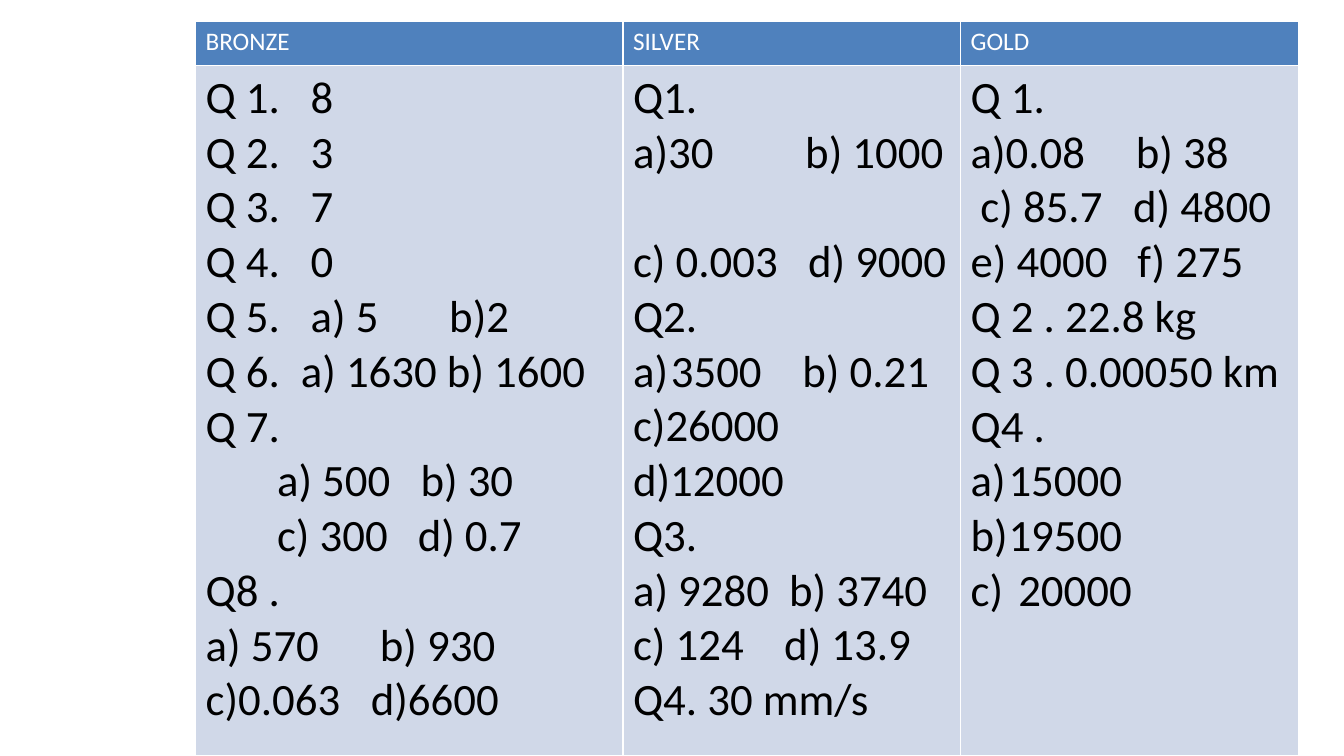
import pptx
import pptx.util
import pptx.dml.color
from lxml import etree

Pt = pptx.util.Pt
INK = {"head": "4F81BD", "body": "D0D8E8", "light": "FFFFFF", "dark": "000000"}
FONT = "Calibri"
NS = "http://schemas.openxmlformats.org/drawingml/2006/main"

# Each line is its text, then options: tab stops, list indent, space before
BRONZE = [
    ("Q 1.\t8", {"tabs": [75]}),
    ("Q 2.\t3", {"tabs": [75]}),
    ("Q 3.\t7", {"tabs": [75]}),
    ("Q 4.\t0", {"tabs": [75]}),
    ("Q 5.\ta) 5\tb)2", {"tabs": [75, 174]}),
    ("Q 6.\ta) 1630 b) 1600", {"tabs": [68]}),
    ("Q 7.", {}),
    ("\ta) 500\tb) 30", {"tabs": [51, 153.5]}),
    ("\tc) 300\td) 0.7", {"tabs": [51, 151.5]}),
    ("Q8 .", {}),
    ("a) 570\tb) 930", {"tabs": [124.5]}),
    ("c)0.063\td)6600", {"tabs": [118]}),
]
SILVER = [
    ("Q1.", {}),
    ("a)30\tb) 1000", {"tabs": [123]}),
    ("c) 0.003\td) 9000", {"tabs": [125], "before": 39}),
    ("Q2.", {}),
    ("3500\tb) 0.21", {"tabs": [121], "hang": 27}),
    ("c)26000", {}),
    ("d)12000", {}),
    ("Q3.", {}),
    ("a) 9280\tb) 3740", {"tabs": [111.5]}),
    ("c) 124\td) 13.9", {"tabs": [108]}),
    ("Q4. 30 mm/s", {}),
]
GOLD = [
    ("Q 1.", {}),
    ("a)0.08\tb) 38", {"tabs": [118]}),
    ("\tc) 85.7\td) 4800", {"tabs": [7, 116]}),
    ("e) 4000\tf) 275", {"tabs": [119]}),
    ("Q 2 . 22.8 kg", {}),
    ("Q 3 . 0.00050 km", {}),
    ("Q4 .", {}),
    ("15000", {"hang": 27}),
    ("19500", {"hang": 27}),
    ("20000", {"hang": 34}),
]
LEVELS = [("BRONZE", 305.3, BRONZE), ("SILVER", 241.2, SILVER), ("GOLD", 241.2, GOLD)]


def tint(name):
    return pptx.dml.color.RGBColor.from_string(INK[name])


def write(para, text, size=32, ink="dark", tabs=(), hang=0, before=0):
    """Fill one paragraph, with tab stops or a lettered hanging indent."""
    run = para.add_run()
    run.text = text
    run.font.name, run.font.size, run.font.bold = FONT, Pt(size), False
    run.font.color.rgb = tint(ink)
    para.space_before = Pt(before)
    props = para._p.get_or_add_pPr()
    if hang:
        props.set("marL", str(Pt(hang)))
        props.set("indent", str(-Pt(hang)))
        etree.SubElement(props, f"{{{NS}}}buAutoNum", type="alphaLcParenR")
    if tabs:
        stops = etree.SubElement(props, f"{{{NS}}}tabLst")
        for stop in tabs:
            etree.SubElement(stops, f"{{{NS}}}tab", pos=str(Pt(stop)), algn="l")


def fill(cell, ink, lines):
    """Colour a cell and write its lines, one paragraph each."""
    cell.fill.solid()
    cell.fill.fore_color.rgb = tint(ink)
    frame = cell.text_frame
    for row, (text, form) in enumerate(lines):
        para = frame.add_paragraph() if row else frame.paragraphs[0]
        write(para, text, **form)


def answers(slide, left, top, width, height, head=32):
    """Table of answers: a header row over one tall cell per level."""
    table = slide.shapes.add_table(
        2, len(LEVELS), Pt(left), Pt(top), Pt(width), Pt(height)).table
    table.rows[0].height = Pt(head)
    table.rows[1].height = Pt(height - head)
    total = sum(share for _, share, _ in LEVELS)
    for col, (name, share, lines) in enumerate(LEVELS):
        table.columns[col].width = Pt(width * share / total)
        fill(table.cell(0, col), "head", [(name, {"size": 18, "ink": "light"})])
        fill(table.cell(1, col), "body", lines)


def main():
    deck = pptx.Presentation()
    deck.slide_width, deck.slide_height = Pt(960), Pt(540)
    slide = deck.slides.add_slide(deck.slide_layouts[6])
    answers(slide, 139.7, 15, 787.7, 525)
    deck.save("out.pptx")


if __name__ == "__main__":
    main()
